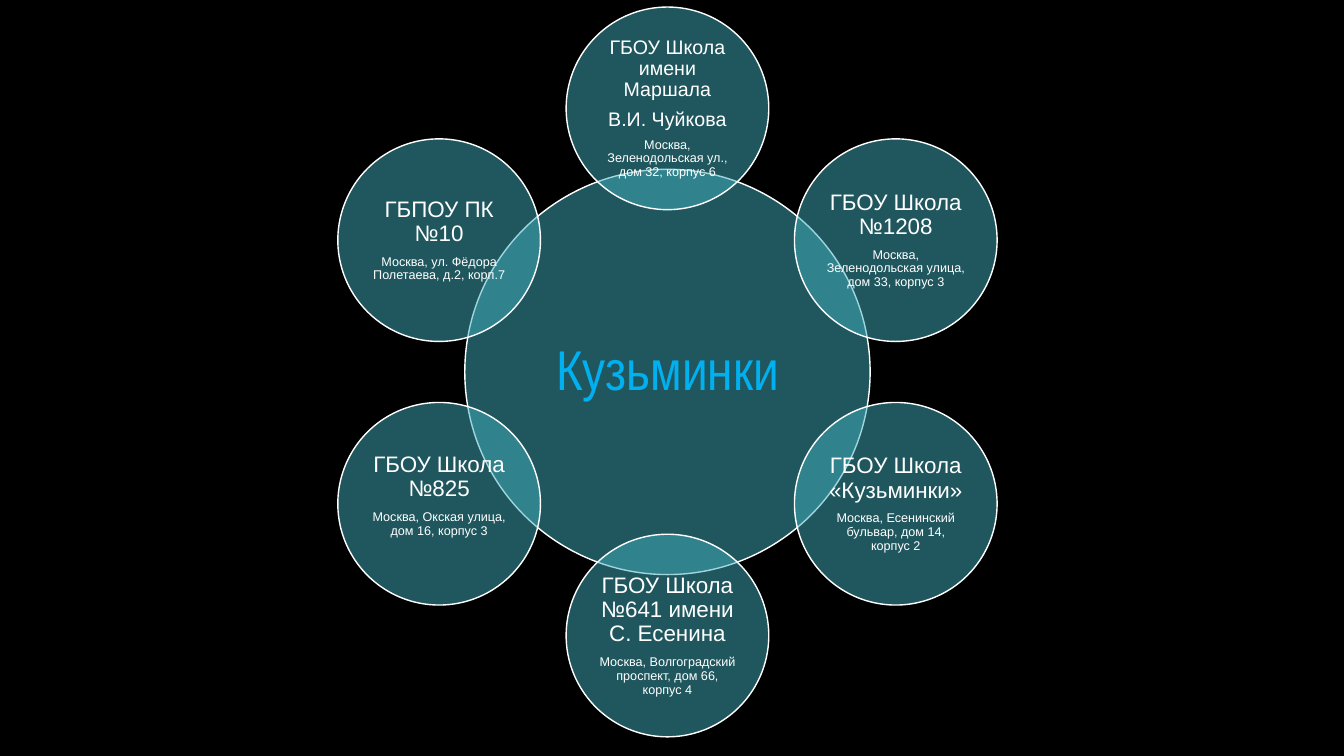
import math
from lxml import etree
from pptx import Presentation
from pptx import util as u
from pptx.dml.color import RGBColor
from pptx.enum import shapes, text
from pptx.oxml.ns import qn

WIDTH, HEIGHT = 13.33, 7.5
DISTRICT = "Кузьминки"
# Clockwise from the top: name lines, name size, address, extra bottom inset
SCHOOLS = [
    (["ГБОУ Школа имени Маршала", "В.И. Чуйкова"], 14,
     "Москва, Зеленодольская ул., дом 32, корпус 6", 0),
    (["ГБОУ Школа №1208"], 16,
     "Москва, Зеленодольская улица, дом 33, корпус 3", 0),
    (["ГБОУ Школа «Кузьминки»"], 16,
     "Москва, Есенинский бульвар, дом 14, корпус 2", 0),
    (["ГБОУ Школа №641 имени С. Есенина"], 16,
     "Москва, Волгоградский проспект, дом 66, корпус 4", 0),
    (["ГБОУ Школа №825"], 16, "Москва, Окская улица, дом 16, корпус 3", 0.16),
    (["ГБПОУ ПК №10"], 16, "Москва, ул. Фёдора Полетаева, д.2, корп.7", 0),
]
ADDRESS_SIZE = 9
CENTRE_X, CENTRE_Y = 6.62, 3.69
HUB, SATELLITE = 4.02, 2.01
RING = 2.615
WHITE = "FFFFFF"


def colour(value):
    return RGBColor.from_string(value)


def apply(target, values):
    for name, value in values.items():
        setattr(target, name, value)


def add_circle(page, x, y, diameter, lines, font, ink, inset, extra_bottom=0):
    """Draw a half-transparent circle centred on x, y; lines are (text, size)."""
    circle = page.shapes.add_shape(
        shapes.MSO_SHAPE.OVAL, u.Inches(x - diameter / 2),
        u.Inches(y - diameter / 2), u.Inches(diameter), u.Inches(diameter))
    circle.shadow.inherit = False
    circle.fill.solid()
    circle.fill.fore_color.rgb = colour("41AEBD")
    tint = circle.fill._xPr.find(qn("a:solidFill"))[0]
    etree.SubElement(tint, qn("a:alpha"), val="50000")
    circle.line.color.rgb = colour(WHITE)
    circle.line.width = u.Pt(1)

    frame = circle.text_frame
    apply(frame, {
        "word_wrap": True,
        "vertical_anchor": text.MSO_ANCHOR.MIDDLE,
        "margin_left": u.Inches(inset),
        "margin_right": u.Inches(inset),
        "margin_top": u.Inches(inset),
        "margin_bottom": u.Inches(inset + extra_bottom),
    })
    for index, (words, size) in enumerate(lines):
        para = frame.add_paragraph() if index else frame.paragraphs[0]
        apply(para, {"alignment": text.PP_ALIGN.CENTER, "line_spacing": 0.9,
                     "space_after": u.Pt(round(size * 0.4, 1))})
        span = para.add_run()
        span.text = words
        apply(span.font, {"name": font, "size": u.Pt(size)})
        span.font.color.rgb = colour(ink)


def main():
    deck = Presentation()
    deck.slide_width, deck.slide_height = u.Inches(WIDTH), u.Inches(HEIGHT)
    page = deck.slides.add_slide(deck.slide_layouts[6])
    page.background.fill.solid()
    page.background.fill.fore_color.rgb = colour("000000")

    add_circle(page, CENTRE_X, CENTRE_Y, HUB, [(DISTRICT, 40)],
               "Arial Narrow", "00B0F0", 0.06)
    for index, (names, size, address, extra) in enumerate(SCHOOLS):
        angle = math.tau * index / len(SCHOOLS)
        lines = [(name, size) for name in names] + [(address, ADDRESS_SIZE)]
        add_circle(page, CENTRE_X + RING * math.sin(angle),
                   CENTRE_Y - RING * math.cos(angle), SATELLITE, lines,
                   "Arial", WHITE, 0.02, extra)
    deck.save("out.pptx")


if __name__ == "__main__":
    main()
